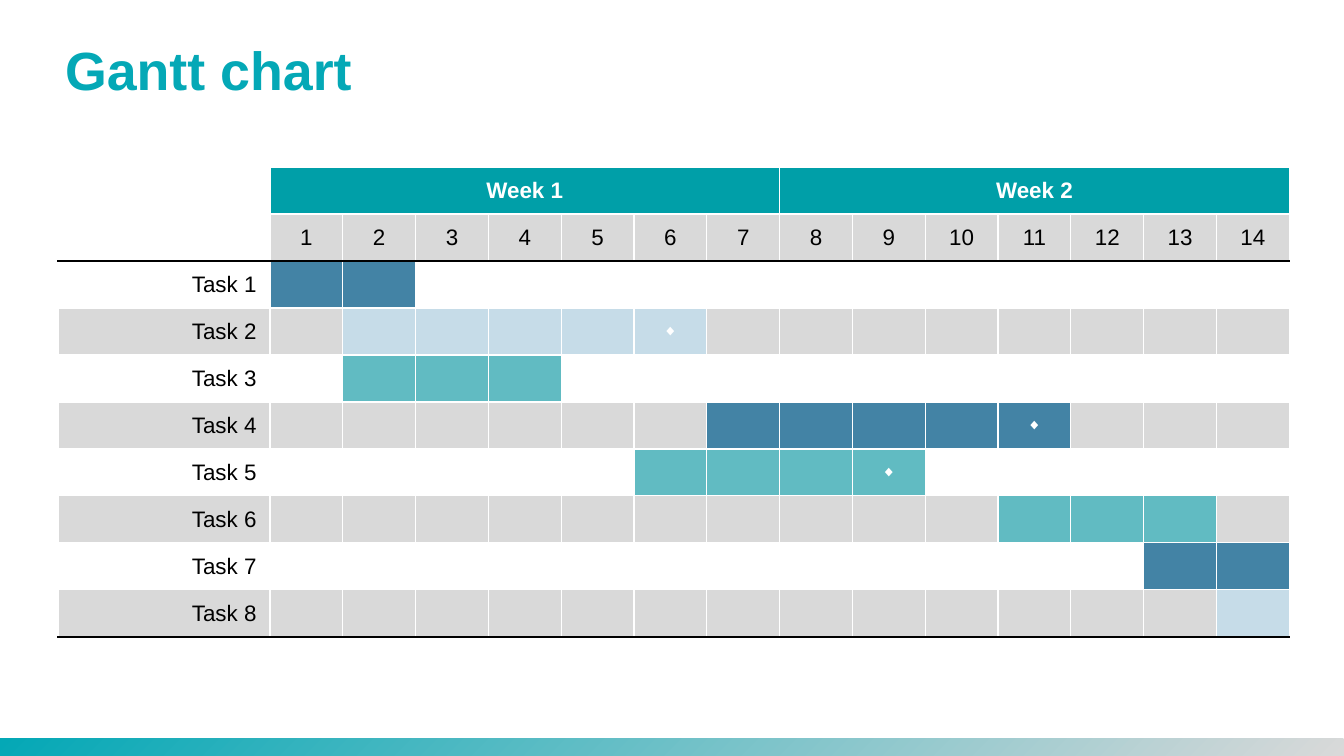
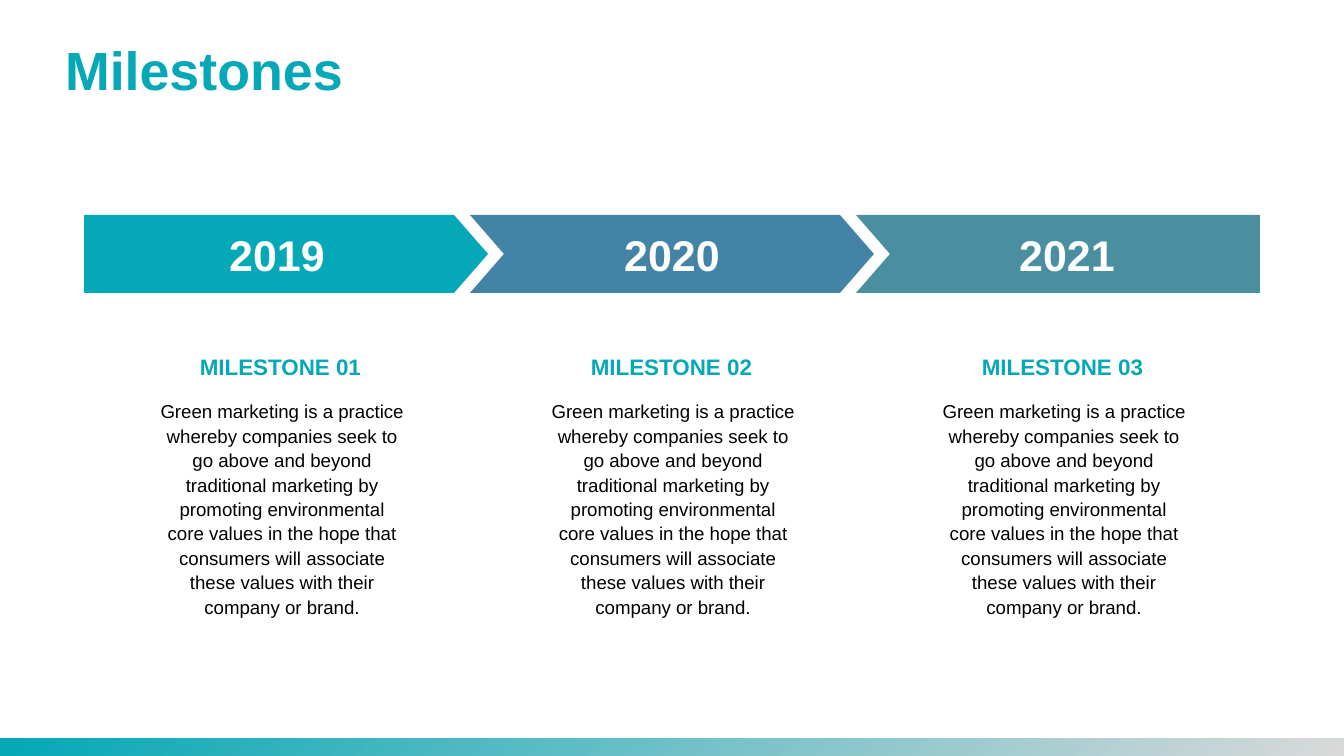
from dataclasses import dataclass

from lxml import etree
from pptx import Presentation
from pptx.dml.color import RGBColor
from pptx.enum.shapes import MSO_SHAPE
from pptx.enum.text import MSO_ANCHOR, MSO_AUTO_SIZE, PP_ALIGN
from pptx.oxml.ns import qn
from pptx.util import Emu, Pt

LEFT, CENTER, RIGHT = PP_ALIGN.LEFT, PP_ALIGN.CENTER, PP_ALIGN.RIGHT
TOP, MIDDLE = MSO_ANCHOR.TOP, MSO_ANCHOR.MIDDLE
FIT_SHAPE = MSO_AUTO_SIZE.SHAPE_TO_FIT_TEXT
RECTANGLE = MSO_SHAPE.RECTANGLE
PIXELS_PER_INCH = 134.4
BLANK_LAYOUT = 6
PLAIN_TABLE_STYLE = "{2D5ABB26-0587-4C30-8999-92F81FD0307C}"


@dataclass(frozen=True)
class Theme:
    font: str = "Arial"
    teal: str = "04A8B6"
    header: str = "009FA8"
    blue: str = "4383A5"
    pale: str = "C6DCE8"
    aqua: str = "61BBC2"
    slate: str = "4A8F9F"
    gray: str = "D9D9D9"
    white: str = "FFFFFF"
    black: str = "000000"
    title_size: float = 28.8
    year_size: float = 23
    label_size: float = 12
    body_size: float = 10
    marker_size: float = 8
    body_leading: float = 13.1


THEME = Theme()

DAYS = 14
DAYS_PER_WEEK = 7
HEADER_ROWS = 2
TASKS = [
    (1, 2, THEME.blue, None),
    (2, 6, THEME.pale, 6),
    (2, 4, THEME.aqua, None),
    (7, 11, THEME.blue, 11),
    (6, 9, THEME.aqua, 9),
    (11, 13, THEME.aqua, None),
    (13, 14, THEME.blue, None),
    (14, 14, THEME.pale, None),
]

MILESTONE_YEARS = [("2019", THEME.teal), ("2020", THEME.blue), ("2021", THEME.slate)]
MILESTONE_TEXT = (
    "Green marketing is a practice whereby companies seek to go above and beyond "
    "traditional marketing by promoting environmental core values in the hope that "
    "consumers will associate these values with their company or brand."
)


def px(length):
    return Emu(round(length * 914400 / PIXELS_PER_INCH))


def rgb(color):
    return RGBColor.from_string(color)


def write_text(frame, text, *, size=THEME.label_size, color=THEME.black, bold=False,
               align=LEFT, line_spacing=None):
    paragraph = frame.paragraphs[0]
    paragraph.alignment = align
    if line_spacing is not None:
        paragraph.line_spacing = line_spacing
    run = paragraph.add_run()
    run.text = text
    run.font.name = THEME.font
    run.font.size = Pt(size)
    run.font.bold = bold
    run.font.color.rgb = rgb(color)


def add_text_box(slide, left, top, width, height, text, *, anchor=MIDDLE, wrap=True,
                 fit=True, margins=(5, 3), **text_format):
    box = slide.shapes.add_textbox(px(left), px(top), px(width), px(height))
    frame = box.text_frame
    frame.word_wrap = wrap
    if fit:
        frame.auto_size = FIT_SHAPE
    frame.vertical_anchor = anchor
    frame.margin_left = frame.margin_right = px(margins[0])
    frame.margin_top = frame.margin_bottom = px(margins[1])
    write_text(frame, text, **text_format)


def add_footer_band(slide):
    band = slide.shapes.add_shape(RECTANGLE, 0, px(739), px(1344), px(17))
    band.shadow.inherit = False
    band.line.fill.background()
    band.fill.gradient()
    band.fill.gradient_angle = 225
    for stop, color in zip(band.fill.gradient_stops, (THEME.gray, THEME.teal)):
        stop.color.rgb = rgb(color)
    band._element.spPr.find(qn("a:xfrm")).set("flipV", "1")


def add_titled_slide(presentation, title):
    slide = presentation.slides.add_slide(presentation.slide_layouts[BLANK_LAYOUT])
    add_footer_band(slide)
    add_text_box(slide, 52, 40, 1236, 67, title, fit=False, margins=(13, 6),
                 size=THEME.title_size, color=THEME.teal, bold=True, line_spacing=0.9)
    return slide


def set_border(cell, side, color, width):
    properties = cell._tc.get_or_add_tcPr()
    line = etree.SubElement(properties, qn(f"a:ln{side}"), w=str(Pt(width)))
    fill = etree.SubElement(line, qn("a:solidFill"))
    etree.SubElement(fill, qn("a:srgbClr"), val=color)


def style_cell(cell, fill, black_sides):
    for side in "LRTB":
        if side in black_sides:
            set_border(cell, side, THEME.black, 1)
        else:
            set_border(cell, side, THEME.white, 0.75)
    if fill:
        cell.fill.solid()
        cell.fill.fore_color.rgb = rgb(fill)
    else:
        cell.fill.background()
    cell.vertical_anchor = MIDDLE
    end = cell.text_frame.paragraphs[0]._p.get_or_add_endParaRPr()
    end.set("sz", str(round(THEME.label_size * 100)))


def gantt_fill(row, day):
    if row < HEADER_ROWS:
        return (THEME.header, THEME.gray)[row] if day else None
    start, finish, color, _ = TASKS[row - HEADER_ROWS]
    if start <= day <= finish:
        return color
    return THEME.gray if row % 2 else None


def add_gantt_table(slide):
    row_count = HEADER_ROWS + len(TASKS)
    frame = slide.shapes.add_table(row_count, DAYS + 1, px(58), px(167),
                                   px(1232), px(47 * row_count))
    table = frame.table
    table.first_row = table.horz_banding = False
    table._tbl.tblPr.find(qn("a:tableStyleId")).text = PLAIN_TABLE_STYLE
    for index, column in enumerate(table.columns):
        column.width = px(1020 / DAYS) if index else px(212)
    black_sides = {HEADER_ROWS - 1: "B", HEADER_ROWS: "T", row_count - 1: "B"}
    for row in range(row_count):
        table.rows[row].height = px(47)
        for day in range(DAYS + 1):
            style_cell(table.cell(row, day), gantt_fill(row, day), black_sides.get(row, ""))

    for week, first_day in enumerate(range(1, DAYS + 1, DAYS_PER_WEEK), 1):
        cell = table.cell(0, first_day)
        cell.merge(table.cell(0, first_day + DAYS_PER_WEEK - 1))
        write_text(cell.text_frame, f"Week {week}", color=THEME.white, bold=True, align=CENTER)
    for day in range(1, DAYS + 1):
        write_text(table.cell(1, day).text_frame, str(day), align=CENTER)
    for number, (_, _, _, marker_day) in enumerate(TASKS, 1):
        row = number + HEADER_ROWS - 1
        write_text(table.cell(row, 0).text_frame, f"Task {number}", align=RIGHT)
        if marker_day:
            write_text(table.cell(row, marker_day).text_frame, "◆", size=THEME.marker_size,
                       color=THEME.white, align=CENTER)


def add_year_arrow(slide, left, color, *, notched, pointed):
    top, middle, bottom = 215, 254, 293
    right, depth = left + 404, 34
    points = [(left, top)]
    if pointed:
        points += [(right - depth, top), (right, middle), (right - depth, bottom)]
    else:
        points += [(right, top), (right, bottom)]
    points.append((left, bottom))
    if notched:
        points.append((left + depth, middle))
    points = [(px(x), px(y)) for x, y in points]
    builder = slide.shapes.build_freeform(*points[0])
    builder.add_line_segments(points[1:], close=True)
    arrow = builder.convert_to_shape()
    arrow.shadow.inherit = False
    arrow.fill.solid()
    arrow.fill.fore_color.rgb = rgb(color)
    arrow.line.fill.background()


def add_milestone(slide, index, year, color):
    last = len(MILESTONE_YEARS) - 1
    add_year_arrow(slide, 84 + 386 * index, color, notched=index > 0, pointed=index < last)
    add_text_box(slide, 222 + 395 * index, 226, 110, 56, year, wrap=False,
                 size=THEME.year_size, color=THEME.white, bold=True, align=CENTER)
    add_text_box(slide, 194 + 391 * index, 351, 173, 32, f"MILESTONE {index + 1:02}",
                 wrap=False, color=THEME.teal, bold=True, align=CENTER)
    add_text_box(slide, 155 + 391 * index, 395, 254, 224, MILESTONE_TEXT, anchor=TOP,
                 size=THEME.body_size, align=CENTER, line_spacing=Pt(THEME.body_leading))


def main():
    presentation = Presentation()
    presentation.slide_width = px(1344)
    presentation.slide_height = px(756)

    add_gantt_table(add_titled_slide(presentation, "Gantt chart"))

    milestones = add_titled_slide(presentation, "Milestones")
    for index, (year, color) in enumerate(MILESTONE_YEARS):
        add_milestone(milestones, index, year, color)

    presentation.save("out.pptx")


if __name__ == "__main__":
    main()
